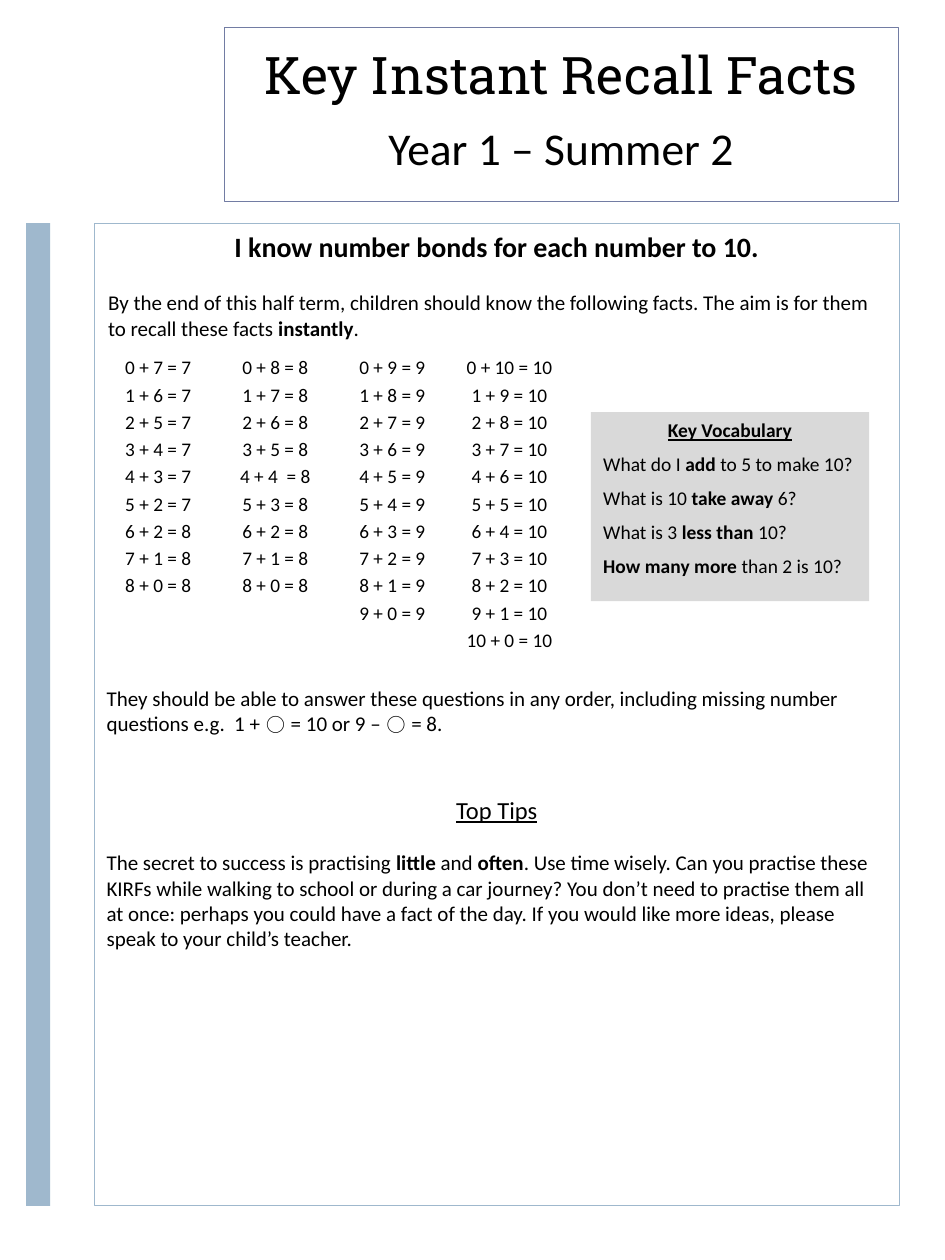
import pptx
import pptx.dml.color
import pptx.enum.shapes
import pptx.enum.text
import pptx.util
from dataclasses import dataclass

Cm = pptx.util.Cm
Pt = pptx.util.Pt
CENTER = pptx.enum.text.PP_ALIGN.CENTER
LEFT = pptx.enum.text.PP_ALIGN.LEFT


@dataclass(frozen=True)
class Theme:
    ink: str = "000000"
    title_line: str = "727CA3"
    accent: str = "9FB8CD"
    panel: str = "D9D9D9"
    body_font: str = "Calibri"
    title_font: str = "Roboto Slab"
    title: float = 29.6
    subtitle: float = 26
    heading: float = 16
    tips_heading: float = 14
    body: float = 12
    facts: float = 11
    vocabulary: float = 11.1


THEME = Theme()

# Columns shared by the parts of the page
PAGE_LEFT, PAGE_TOP, PAGE_WIDTH, PAGE_HEIGHT = 1.9, 4.5, 16.23, 19.81
TITLE_LEFT, TITLE_WIDTH = 4.52, 13.59


def rgb(value):
    return pptx.dml.color.RGBColor.from_string(value)


def write(paragraph, text, size, align=LEFT, font=THEME.body_font,
          underline=False, before=0, spacing=1.0):
    """Fill a paragraph; words between asterisks are bold."""
    paragraph.alignment = align
    paragraph.space_before = Pt(before)
    paragraph.line_spacing = spacing
    paragraph.font.size = Pt(size)
    paragraph.font.name = font
    paragraph.font.underline = underline
    paragraph.font.color.rgb = rgb(THEME.ink)
    for index, part in enumerate(text.split("*")):
        if part:
            run = paragraph.add_run()
            run.text = part
            run.font.bold = index % 2 == 1


def next_paragraph(frame):
    first = frame.paragraphs[0]
    return frame.add_paragraph() if first.runs else first


def add_box(slide, left, top, width, height, fill=None, line=None):
    box = slide.shapes.add_shape(
        pptx.enum.shapes.MSO_SHAPE.RECTANGLE,
        Cm(left), Cm(top), Cm(width), Cm(height))
    box.shadow.inherit = False
    if fill:
        box.fill.solid()
        box.fill.fore_color.rgb = rgb(fill)
    else:
        box.fill.background()
    if line:
        box.line.color.rgb = rgb(line)
        box.line.width = Pt(0.5)
    else:
        box.line.fill.background()
    return box


def add_text(slide, left, top, width, height, anchor=pptx.enum.text.MSO_ANCHOR.TOP):
    frame = slide.shapes.add_textbox(Cm(left), Cm(top), Cm(width), Cm(height)).text_frame
    frame.word_wrap = True
    frame.vertical_anchor = anchor
    return frame


def bonds(total, first=0, last=None):
    last = total if last is None else last
    return [f"{n} + {total - n} = {total}" for n in range(first, last + 1)]


def add_facts(slide, columns):
    column_width, height = 2.36, 6.4
    table = slide.shapes.add_table(
        1, len(columns), Cm(2.01), Cm(7.11),
        Cm(column_width * len(columns)), Cm(height)).table
    table.first_row = table.horz_banding = False
    for index, facts in enumerate(columns):
        table.columns[index].width = Cm(column_width)
        cell = table.cell(0, index)
        cell.fill.background()
        cell.margin_left = cell.margin_right = Cm(0.18)
        cell.margin_top = cell.margin_bottom = 0
        for fact in facts:
            write(next_paragraph(cell.text_frame), fact, THEME.facts, CENTER, spacing=1.15)


def add_vocabulary(slide, questions):
    panel = add_box(slide, 11.91, 8.31, 5.61, 3.81, fill=THEME.panel)
    frame = panel.text_frame
    frame.word_wrap = True
    frame.vertical_anchor = pptx.enum.text.MSO_ANCHOR.TOP
    write(frame.paragraphs[0], "*Key Vocabulary*", THEME.vocabulary, CENTER, underline=True)
    for question in questions:
        write(frame.add_paragraph(), question, THEME.vocabulary, before=6)


def main():
    deck = pptx.Presentation()
    deck.slide_width, deck.slide_height = Cm(19.05), Cm(25.4)
    slide = deck.slides.add_slide(deck.slide_layouts[6])

    # Frames and side bar
    add_box(slide, TITLE_LEFT, 0.56, TITLE_WIDTH, 3.51, line=THEME.title_line)
    add_box(slide, PAGE_LEFT, PAGE_TOP, PAGE_WIDTH, PAGE_HEIGHT, line=THEME.accent)
    add_box(slide, 0.53, PAGE_TOP, 0.48, PAGE_HEIGHT, fill=THEME.accent)

    # Title and term
    title = add_text(slide, TITLE_LEFT, 0.74, TITLE_WIDTH, 1.5,
                     pptx.enum.text.MSO_ANCHOR.MIDDLE)
    write(title.paragraphs[0], "Key Instant Recall Facts", THEME.title, CENTER, THEME.title_font)
    term = add_text(slide, TITLE_LEFT, 2.29, TITLE_WIDTH, 1.75)
    write(term.paragraphs[0], "Year 1 – Summer 2", THEME.subtitle, CENTER)

    # Goal and introduction
    goal = add_text(slide, PAGE_LEFT, PAGE_TOP, PAGE_WIDTH, 1.4)
    write(goal.paragraphs[0], "*I know number bonds for each number to 10.*",
          THEME.heading, CENTER)
    introduction = add_text(slide, 1.93, 5.72, PAGE_WIDTH, 2.06)
    write(introduction.paragraphs[0],
          "By the end of this half term, children should know the following facts. "
          "The aim is for them to recall these facts *instantly*.", THEME.body)

    # Number bonds
    add_facts(slide, [
        bonds(7, last=5) + bonds(8, first=6),
        bonds(8, last=3) + ["4 + 4  = 8"] + bonds(8, first=5),
        bonds(9),
        bonds(10),
    ])

    # Vocabulary
    add_vocabulary(slide, [
        "What do I *add *to 5 to make 10?",
        "What is 10 *take away *6?",
        "What is 3 *less than *10?",
        "*How many more *than 2 is 10?",
    ])

    # Missing numbers
    missing = add_text(slide, PAGE_LEFT, 13.69, PAGE_WIDTH, 1.7)
    write(missing.paragraphs[0],
          "They should be able to answer these questions in any order, including "
          "missing number questions e.g.  1 + ⃝ = 10 or 9 – ⃝ = 8.", THEME.body)

    # Tips
    tips = add_text(slide, PAGE_LEFT, 15.9, PAGE_WIDTH, 8.41)
    write(tips.paragraphs[0], "Top Tips", THEME.tips_heading, CENTER, underline=True)
    write(tips.add_paragraph(),
          "The secret to success is practising *little* and *often*. Use time wisely. "
          "Can you practise these KIRFs while walking to school or during a car journey? "
          "You don’t need to practise them all at once: perhaps you could have a fact of "
          "the day. If you would like more ideas, please speak to your child’s teacher.",
          THEME.body, before=14.6)

    deck.save("out.pptx")


if __name__ == "__main__":
    main()
